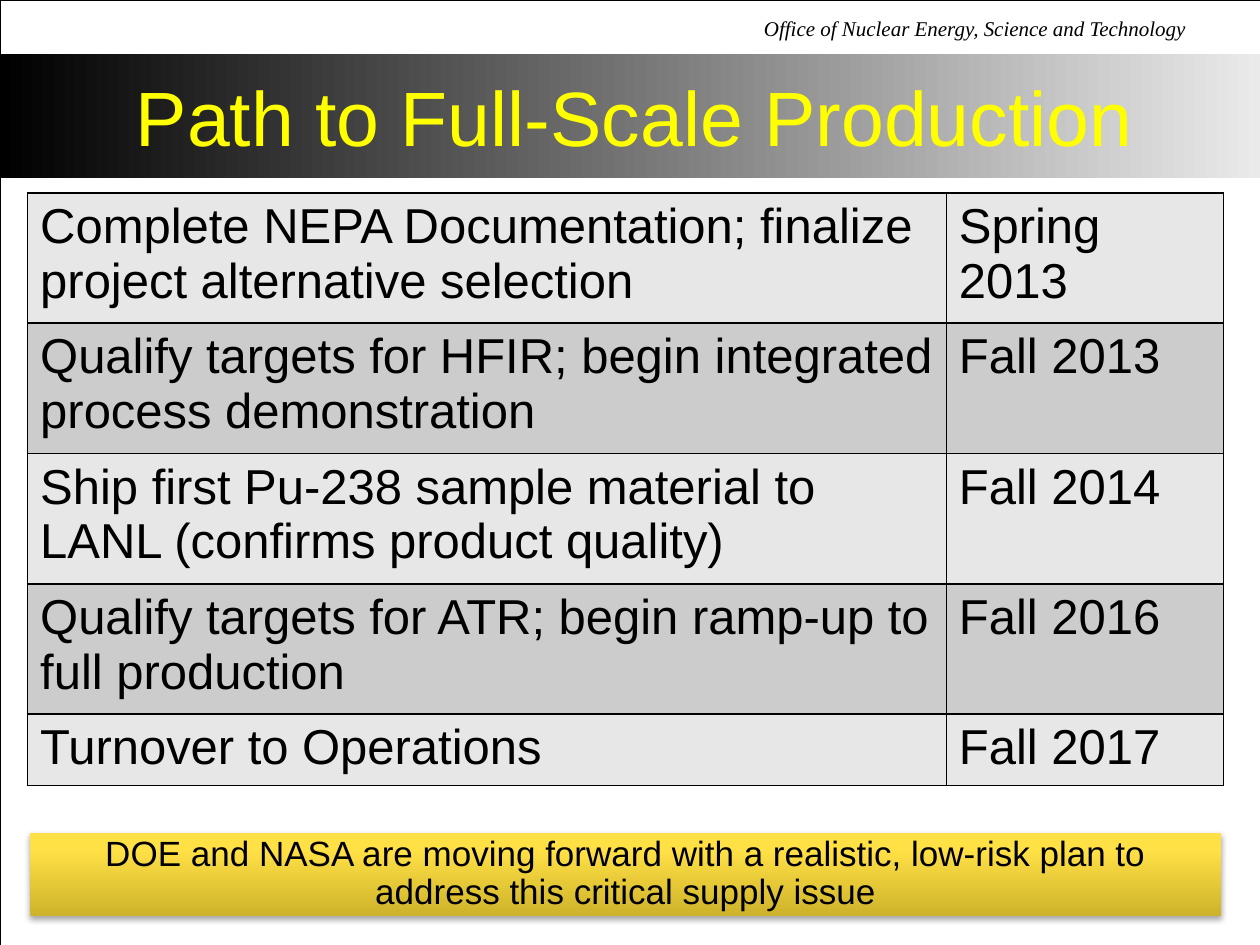
from dataclasses import dataclass

import lxml.etree
import pptx
import pptx.dml.color
import pptx.enum.shapes
import pptx.enum.text
import pptx.oxml
import pptx.oxml.ns
import pptx.util

Pt = pptx.util.Pt
Align = pptx.enum.text.PP_ALIGN
qn = pptx.oxml.ns.qn


@dataclass(frozen=True)
class Theme:
    ink: str = "000000"
    title: str = "FFFF00"
    row_fills: tuple = ("E7E7E7", "CCCCCC")
    band_stops: tuple = ((0, "000000"), (100, "EAEAEA"))
    message_stops: tuple = ((0, "CEB32B"), (80, "FFE045"), (100, "FFE046"))
    sans: str = "Arial"
    serif: str = "Times New Roman"
    office_size: float = 12
    title_size: float = 44
    table_size: float = 28
    message_size: float = 20


@dataclass(frozen=True)
class Box:
    left: float
    top: float
    width: float
    height: float

    def lengths(self) -> tuple:
        return Pt(self.left), Pt(self.top), Pt(self.width), Pt(self.height)


@dataclass(frozen=True)
class Milestone:
    task: str
    due: str
    height: float = 69.6


THEME = Theme()
MILESTONES = (
    Milestone("Complete NEPA Documentation; finalize project alternative selection", "Spring 2013"),
    Milestone("Qualify targets for HFIR; begin integrated process demonstration", "Fall 2013"),
    Milestone("Ship first Pu-238 sample material to LANL (confirms product quality)", "Fall 2014"),
    Milestone("Qualify targets for ATR; begin ramp-up to full production", "Fall 2016"),
    Milestone("Turnover to Operations", "Fall 2017", 38.4),
)
COLUMN_WIDTHS = (525, 158.4)


def rgb(color: str):
    return pptx.dml.color.RGBColor.from_string(color)


def shadow_effect(color: str, opacity: int, blur: float, distance: float, angle: int):
    return pptx.oxml.parse_xml(
        f'<a:effectLst {pptx.oxml.ns.nsdecls("a")}>'
        f'<a:outerShdw blurRad="{Pt(blur)}" dist="{Pt(distance)}" dir="{angle * 60000}" '
        f'algn="ctr" rotWithShape="0"><a:srgbClr val="{color}">'
        f'<a:alpha val="{opacity * 1000}"/></a:srgbClr></a:outerShdw></a:effectLst>'
    )


def write(frame, text: str, size: float, color: str, font: str = THEME.sans,
          align=Align.LEFT, italic: bool = False):
    frame.text = text
    paragraph = frame.paragraphs[0]
    paragraph.alignment = align
    run = paragraph.runs[0]
    run.font.size = Pt(size)
    run.font.name = font
    run.font.italic = italic
    run.font.color.rgb = rgb(color)
    return paragraph


def add_rectangle(slide, box: Box):
    rectangle = slide.shapes.add_shape(
        pptx.enum.shapes.MSO_SHAPE.RECTANGLE, *box.lengths())
    rectangle.shadow.inherit = False
    rectangle.line.fill.background()
    return rectangle


def add_gradient_rectangle(slide, box: Box, stops: tuple, angle: int):
    rectangle = add_rectangle(slide, box)
    rectangle.fill.gradient()
    rectangle.fill.gradient_angle = angle
    stop_list = next(rectangle._element.iter(qn("a:gsLst")))
    for stop in list(stop_list):
        stop_list.remove(stop)
    for position, color in stops:
        stop = lxml.etree.SubElement(stop_list, qn("a:gs"), pos=str(position * 1000))
        lxml.etree.SubElement(stop, qn("a:srgbClr"), val=color)
    return rectangle


def add_frame(slide, box: Box) -> None:
    frame = add_rectangle(slide, box)
    frame.fill.background()
    frame.line.color.rgb = rgb(THEME.ink)
    frame.line.width = Pt(0.25)


def add_office_name(slide, box: Box) -> None:
    office = slide.shapes.add_textbox(*box.lengths()).text_frame
    office.word_wrap = False
    paragraph = write(office, "Office of Nuclear Energy, Science and Technology",
                      THEME.office_size, THEME.ink, THEME.serif, Align.RIGHT, True)
    paragraph.line_spacing = 0.75


def add_title(slide, box: Box) -> None:
    title = slide.shapes.add_textbox(*box.lengths()).text_frame
    title.word_wrap = True
    title.vertical_anchor = pptx.enum.text.MSO_ANCHOR.MIDDLE
    paragraph = write(title, "Path to Full-Scale Production",
                      THEME.title_size, THEME.title, align=Align.CENTER)
    color_fill = next(paragraph._p.iter(qn("a:solidFill")))
    color_fill.addnext(shadow_effect(THEME.ink, 100, 0, 3, 45))


def add_cell_borders(cell, color: str, width: float) -> None:
    properties = cell._tc.get_or_add_tcPr()
    for index, side in enumerate(("lnL", "lnR", "lnT", "lnB")):
        border = pptx.oxml.parse_xml(
            f'<a:{side} {pptx.oxml.ns.nsdecls("a")} w="{Pt(width)}"><a:solidFill>'
            f'<a:srgbClr val="{color}"/></a:solidFill></a:{side}>')
        properties.insert(index, border)


def add_schedule(slide, left: float, top: float) -> None:
    box = Box(left, top, sum(COLUMN_WIDTHS), sum(m.height for m in MILESTONES))
    schedule = slide.shapes.add_table(
        len(MILESTONES), len(COLUMN_WIDTHS), *box.lengths()).table
    schedule.first_row = False
    schedule.horz_banding = False
    for column, width in zip(schedule.columns, COLUMN_WIDTHS):
        column.width = Pt(width)
    for index, (row, milestone) in enumerate(zip(schedule.rows, MILESTONES)):
        row.height = Pt(milestone.height)
        for cell, text in zip(row.cells, (milestone.task, milestone.due)):
            cell.fill.solid()
            cell.fill.fore_color.rgb = rgb(THEME.row_fills[index % 2])
            add_cell_borders(cell, THEME.ink, 1)
            write(cell.text_frame, text, THEME.table_size, THEME.ink)


def add_message(slide, box: Box) -> None:
    message = add_gradient_rectangle(slide, box, THEME.message_stops, 90)
    properties = message._element.spPr
    properties.replace(properties.find(qn("a:effectLst")),
                       shadow_effect(THEME.ink, 35, 3.1, 1.8, 90))
    frame = message.text_frame
    frame.word_wrap = True
    frame.vertical_anchor = pptx.enum.text.MSO_ANCHOR.MIDDLE
    frame.margin_left = frame.margin_right = Pt(6)
    frame.margin_top = frame.margin_bottom = Pt(6)
    paragraph = write(
        frame,
        "DOE and NASA are moving forward with a realistic, low-risk plan to "
        "address this critical supply issue",
        THEME.message_size, THEME.ink, align=Align.CENTER)
    paragraph.line_spacing = 0.9


def main() -> None:
    presentation = pptx.Presentation()
    presentation.slide_width, presentation.slide_height = Pt(720), Pt(540)
    slide = presentation.slides.add_slide(presentation.slide_layouts[6])
    add_gradient_rectangle(slide, Box(0, 31, 720, 71), THEME.band_stops, 0)
    add_frame(slide, Box(0, 0, 720, 540))
    add_office_name(slide, Box(423, 8.6, 262, 18))
    add_title(slide, Box(23.8, 48.2, 678, 36))
    add_schedule(slide, 15.8, 110.2)
    add_message(slide, Box(17.3, 476, 680.4, 47.5))
    presentation.save("out.pptx")


if __name__ == "__main__":
    main()
